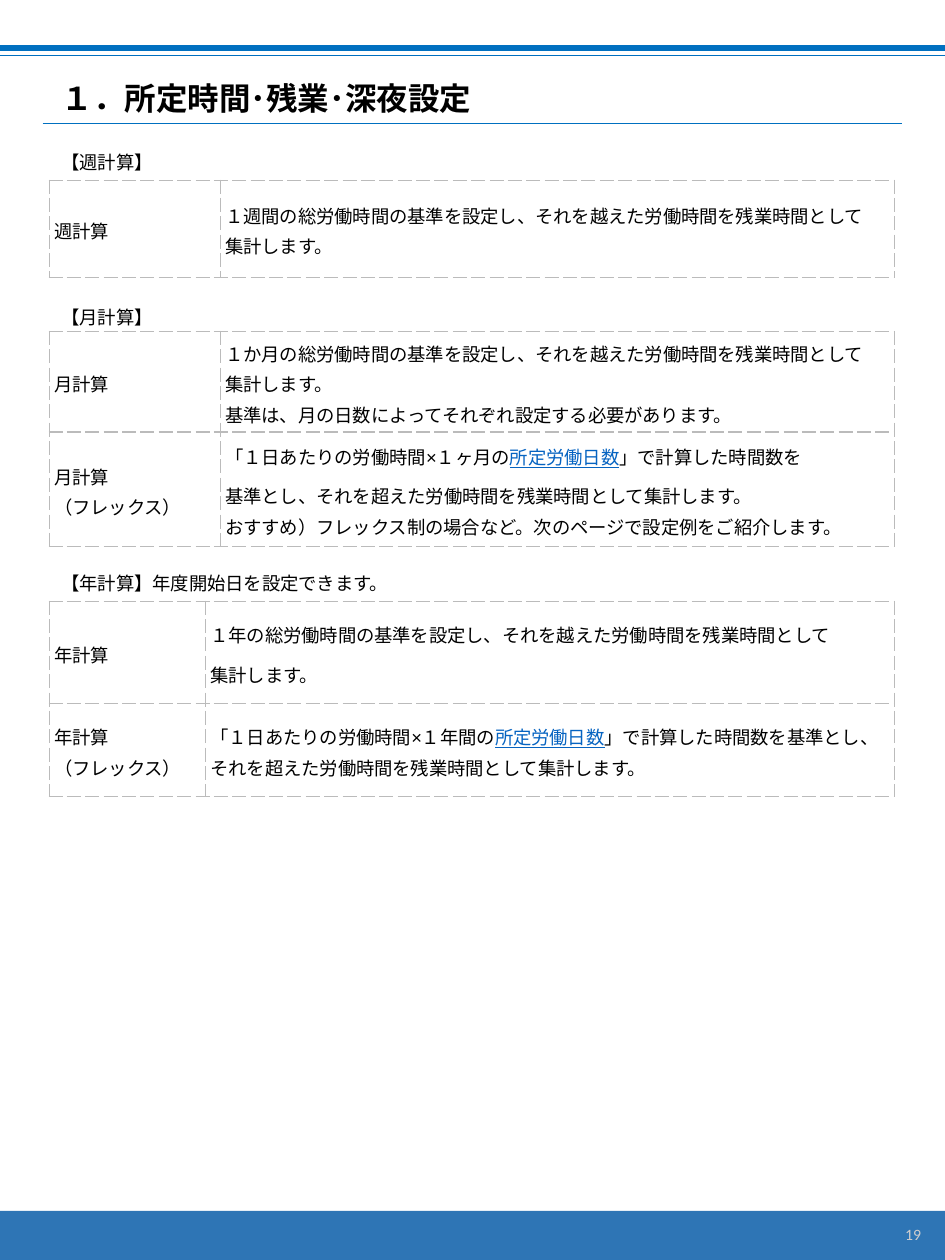
from lxml.etree import SubElement
from pptx import Presentation
from pptx.dml.color import RGBColor
from pptx.enum.lang import MSO_LANGUAGE_ID as Lang
from pptx.enum.shapes import MSO_CONNECTOR as Connector, MSO_SHAPE as Shape
from pptx.enum.text import MSO_ANCHOR as Anchor, PP_ALIGN as Align
from pptx.oxml import parse_xml
from pptx.oxml.ns import nsdecls, qn
from pptx.util import Cm, Pt

BLACK = RGBColor(0, 0, 0)
BLUE = RGBColor(0x00, 0x70, 0xC0)
FOOTER_BLUE = RGBColor(0x2E, 0x75, 0xB5)
LINK_BLUE = RGBColor(0x05, 0x63, 0xC1)
PAGE_GREY = RGBColor(0xD0, 0xCE, 0xCE)
BORDER_GREY = RGBColor(0xBB, 0xBB, 0xBB)

W, H = 19.05, 25.4
LEFT, TABLE_W = 0.99, 17.04
TITLE = "１．所定時間･残業･深夜設定"
LINK = "所定労働日数"
PAGE = "19"

# Each row: height, label paragraphs, description paragraphs (text, line spacing)
SECTIONS = [
    dict(heading="【週計算】", heading_top=2.92, spacing=1.0, top=3.63, label_w=3.45, rows=[
        (1.96, ["週計算"], [
            ("１週間の総労働時間の基準を設定し、それを越えた労働時間を残業時間として", 1.15),
            ("集計します。", 1.15)]),
    ]),
    dict(heading="【月計算】", heading_top=5.99, spacing=1.15, top=6.68, label_w=3.45, rows=[
        (2.03, ["月計算"], [
            ("１か月の総労働時間の基準を設定し、それを越えた労働時間を残業時間として", 1.15),
            ("集計します。\v基準は、月の日数によってそれぞれ設定する必要があります。", 1.15)]),
        (2.31, ["月計算", "（フレックス）"], [
            ("「１日あたりの労働時間×１ヶ月の所定労働日数」で計算した時間数を", 1.15),
            ("基準とし、それを超えた労働時間を残業時間として集計します。", 1.5),
            ("おすすめ）フレックス制の場合など。次のページで設定例をご紹介します。", 1.15)]),
    ]),
    dict(heading="【年計算】年度開始日を設定できます。", heading_top=11.35, spacing=1.15,
         top=12.12, label_w=3.15, rows=[
        (2.06, ["年計算"], [
            ("１年の総労働時間の基準を設定し、それを越えた労働時間を残業時間として", 1.15),
            ("集計します。", 1.5)]),
        (1.88, ["年計算", "（フレックス）"], [
            ("「１日あたりの労働時間×１年間の所定労働日数」で計算した時間数を基準とし、"
             "それを超えた労働時間を残業時間として集計します。", 1.15)]),
    ]),
]


def set_font(p, size=10.5, name="Arial", color=BLACK, bold=False):
    f = p.font
    f.size, f.name, f.bold = Pt(size), name, bold
    f.color.rgb = color
    f.language_id = Lang.JAPANESE


def add_line(s, x1, x2, y, width):
    line = s.shapes.add_connector(Connector.STRAIGHT, Cm(x1), Cm(y), Cm(x2), Cm(y))
    line.line.color.rgb = BLUE
    line.line.width = Pt(width)
    SubElement(line._element.spPr, qn("a:effectLst"))


def add_text(s, text, x, y, w, h):
    tf = s.shapes.add_textbox(Cm(x), Cm(y), Cm(w), Cm(h)).text_frame
    tf.word_wrap = True
    p = tf.paragraphs[0]
    p.text = text
    return tf, p


def set_borders(cell):
    tc_pr = cell._tc.get_or_add_tcPr()
    for i, side in enumerate("LRTB"):
        tc_pr.insert(i, parse_xml(
            f'<a:ln{side} {nsdecls("a")} w="{Pt(0.75)}"><a:solidFill>'
            f'<a:srgbClr val="{BORDER_GREY}"/></a:solidFill>'
            f'<a:prstDash val="dash"/></a:ln{side}>'))


def fill_cell(cell, paragraphs, font):
    cell.fill.background()
    set_borders(cell)
    cell.vertical_anchor = Anchor.MIDDLE
    cell.margin_left = cell.margin_right = Cm(0.1)
    cell.margin_top = cell.margin_bottom = Cm(0.05)
    tf = cell.text_frame
    for i, (text, spacing) in enumerate(paragraphs):
        p = tf.add_paragraph() if i else tf.paragraphs[0]
        p.line_spacing = spacing
        set_font(p, name=font)
        if LINK not in text:
            p.text = text
            continue
        for part in text.partition(LINK):
            r = p.add_run()
            r.text = part
            if part == LINK:
                r.font.color.rgb = LINK_BLUE
                r.font.underline = True


def add_section(s, sec):
    _, p = add_text(s, sec["heading"], LEFT, sec["heading_top"], 15.75, 0.71)
    p.line_spacing = sec["spacing"]
    set_font(p)
    rows = sec["rows"]
    table = s.shapes.add_table(len(rows), 2, Cm(LEFT), Cm(sec["top"]), Cm(TABLE_W),
                               Cm(sum(row[0] for row in rows))).table
    table.first_row = table.horz_banding = False
    table.columns[0].width = Cm(sec["label_w"])
    table.columns[1].width = Cm(TABLE_W - sec["label_w"])
    for i, (height, label, description) in enumerate(rows):
        table.rows[i].height = Cm(height)
        fill_cell(table.cell(i, 0), [(text, 1.15) for text in label], "Calibri")
        fill_cell(table.cell(i, 1), description, "Arial")


def main():
    prs = Presentation()
    prs.slide_width, prs.slide_height = Cm(W), Cm(H)
    s = prs.slides.add_slide(prs.slide_layouts[5])

    footer = s.shapes.add_shape(Shape.RECTANGLE, 0, Cm(24.41), Cm(W), Cm(0.99))
    footer.shadow.inherit = False
    footer.fill.solid()
    footer.fill.fore_color.rgb = FOOTER_BLUE
    footer.line.fill.background()
    add_line(s, 0, W, 0.97, 3)
    add_line(s, 0, W, 1.12, 0.75)

    title = s.shapes.title
    title.left, title.top, title.width, title.height = Cm(LEFT), Cm(1.35), Cm(17.35), Cm(1.14)
    title.text = TITLE
    title.text_frame.vertical_anchor = Anchor.BOTTOM
    p = title.text_frame.paragraphs[0]
    p.alignment = Align.LEFT
    p.line_spacing = 1.08
    set_font(p, 18, bold=True)
    add_line(s, 0.86, 18.19, 2.49, 0.75)

    for sec in SECTIONS:
        add_section(s, sec)

    tf, p = add_text(s, PAGE, 14.53, 24.41, 4.29, 0.94)
    tf.vertical_anchor = Anchor.MIDDLE
    p.alignment = Align.RIGHT
    set_font(p, 9, "Calibri", PAGE_GREY)

    prs.save("out.pptx")


if __name__ == "__main__":
    main()
